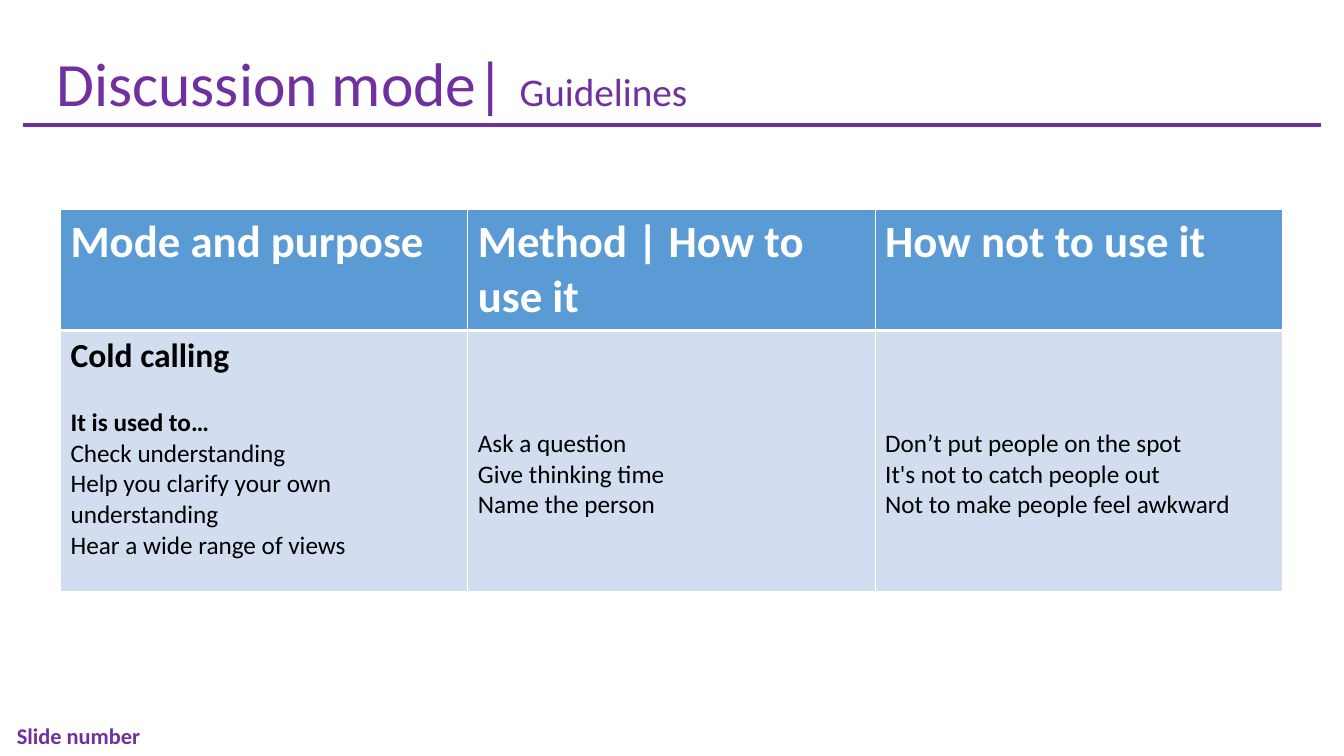
from lxml import etree
from pptx import Presentation
from pptx.dml.color import RGBColor
from pptx.enum.shapes import MSO_CONNECTOR
from pptx.enum.text import MSO_ANCHOR, MSO_AUTO_SIZE, PP_ALIGN
from pptx.oxml import parse_xml
from pptx.oxml.ns import nsdecls, qn
from pptx.util import Pt

STRAIGHT = MSO_CONNECTOR.STRAIGHT
TOP, MIDDLE = MSO_ANCHOR.TOP, MSO_ANCHOR.MIDDLE
NO_AUTOFIT = MSO_AUTO_SIZE.NONE
LEFT = PP_ALIGN.LEFT

EMU_PER_PX = 9144  # 100 px to the inch
TITLE_ONLY = 5

FONT = "Calibri"
PURPLE = "7030A0"
WHITE = "FFFFFF"
BLACK = "000000"
HEADER_FILL = "5B9BD5"
BODY_FILL = "D2DEEF"

HEADERS = ["Mode and purpose", "Method | How to use it", "How not to use it"]
PURPOSE = [
    "Cold calling",
    "It is used to…",
    "Check understanding",
    "Help you clarify your own understanding",
    "Hear a wide range of views",
]
METHOD = ["Ask a question", "Give thinking time", "Name the person"]
MISUSE = [
    "Don’t put people on the spot",
    "It's not to catch people out",
    "Not to make people feel awkward",
]


def px(n):
    return n * EMU_PER_PX


def rgb(value):
    return RGBColor.from_string(value)


def style(r, size, color, bold=False):
    r.font.name = FONT
    r.font.size = Pt(size)
    r.font.color.rgb = rgb(color)
    r.font.bold = bold


class SlideBuilder:
    def __init__(self, prs):
        self.s = prs.slides.add_slide(prs.slide_layouts[TITLE_ONLY])

    def title(self, x, y, w, h, parts):
        """Fill the title placeholder with (text, size) runs."""
        sp = self.s.shapes.title
        sp.left, sp.top, sp.width, sp.height = map(px, (x, y, w, h))
        tf = sp.text_frame
        tf.auto_size = NO_AUTOFIT
        tf.vertical_anchor = TOP
        p = tf.paragraphs[0]
        p.alignment = LEFT
        for text, size in parts:
            r = p.add_run()
            r.text = text
            style(r, size, PURPLE)

    def text(self, x, y, w, h, text, size):
        sp = self.s.shapes.add_textbox(*map(px, (x, y, w, h)))
        tf = sp.text_frame
        tf.word_wrap = True
        tf.vertical_anchor = MIDDLE
        tf.text = text
        style(tf.paragraphs[0].runs[0], size, PURPLE, True)

    def rule(self, x1, x2, y, width):
        sp = self.s.shapes.add_connector(STRAIGHT, px(x1), px(y), px(x2), px(y))
        sp.line.color.rgb = rgb(PURPLE)
        sp.line.width = Pt(width)
        etree.SubElement(sp._element.spPr, qn("a:effectLst"))

    def table(self, x, y, col_width, row_heights, cols):
        size = (col_width * cols, sum(row_heights))
        frame = self.s.shapes.add_table(len(row_heights), cols, *map(px, (x, y, *size)))
        table = frame.table
        for col in table.columns:
            col.width = px(col_width)
        for row, height in zip(table.rows, row_heights):
            row.height = px(height)
        return table

    def cell(self, cell, lines, fill, color, borders):
        """Write (text, size, bold) lines; borders are left, right, top, bottom in points."""
        cell.fill.solid()
        cell.fill.fore_color.rgb = rgb(fill)
        tf = cell.text_frame
        tf.text = "\n".join(text for text, _, _ in lines)
        for p, (_, size, bold) in zip(tf.paragraphs, lines):
            style(p.runs[0], size, color, bold)
        tc_pr = cell._tc.get_or_add_tcPr()
        for i, (side, width) in enumerate(zip("LRTB", borders)):
            tc_pr.insert(i, parse_xml(
                f'<a:ln{side} {nsdecls("a")} w="{Pt(width)}"><a:solidFill>'
                f'<a:srgbClr val="{WHITE}"/></a:solidFill></a:ln{side}>'))


def main():
    prs = Presentation()
    prs.slide_width, prs.slide_height = px(1333), px(750)
    slide = SlideBuilder(prs)

    slide.text(7, 710, 300, 40, "Slide number", 16)
    slide.rule(23, 1310, 124, 3)
    slide.title(46, 40, 1241, 84, [("Discussion mode| ", 44), ("Guidelines", 28)])

    table = slide.table(60, 208, 404, [120, 259], len(HEADERS))
    for i, header in enumerate(HEADERS):
        slide.cell(table.cell(0, i), [(header, 32, True)], HEADER_FILL, WHITE, (1, 1, 1, 3))

    purpose = [(text, 18, i < 2) for i, text in enumerate(PURPOSE)]
    purpose[0] = (PURPOSE[0], 24, True)
    body = [purpose] + [[(text, 18, False) for text in lines] for lines in (METHOD, MISUSE)]
    for i, lines in enumerate(body):
        slide.cell(table.cell(1, i), lines, BODY_FILL, BLACK, (1, 1, 3, 1))
    table.cell(1, 0).text_frame.paragraphs[1].space_before = Pt(22)
    for i in (1, 2):
        table.cell(1, i).margin_top = px(97)

    prs.save("out.pptx")


if __name__ == "__main__":
    main()
